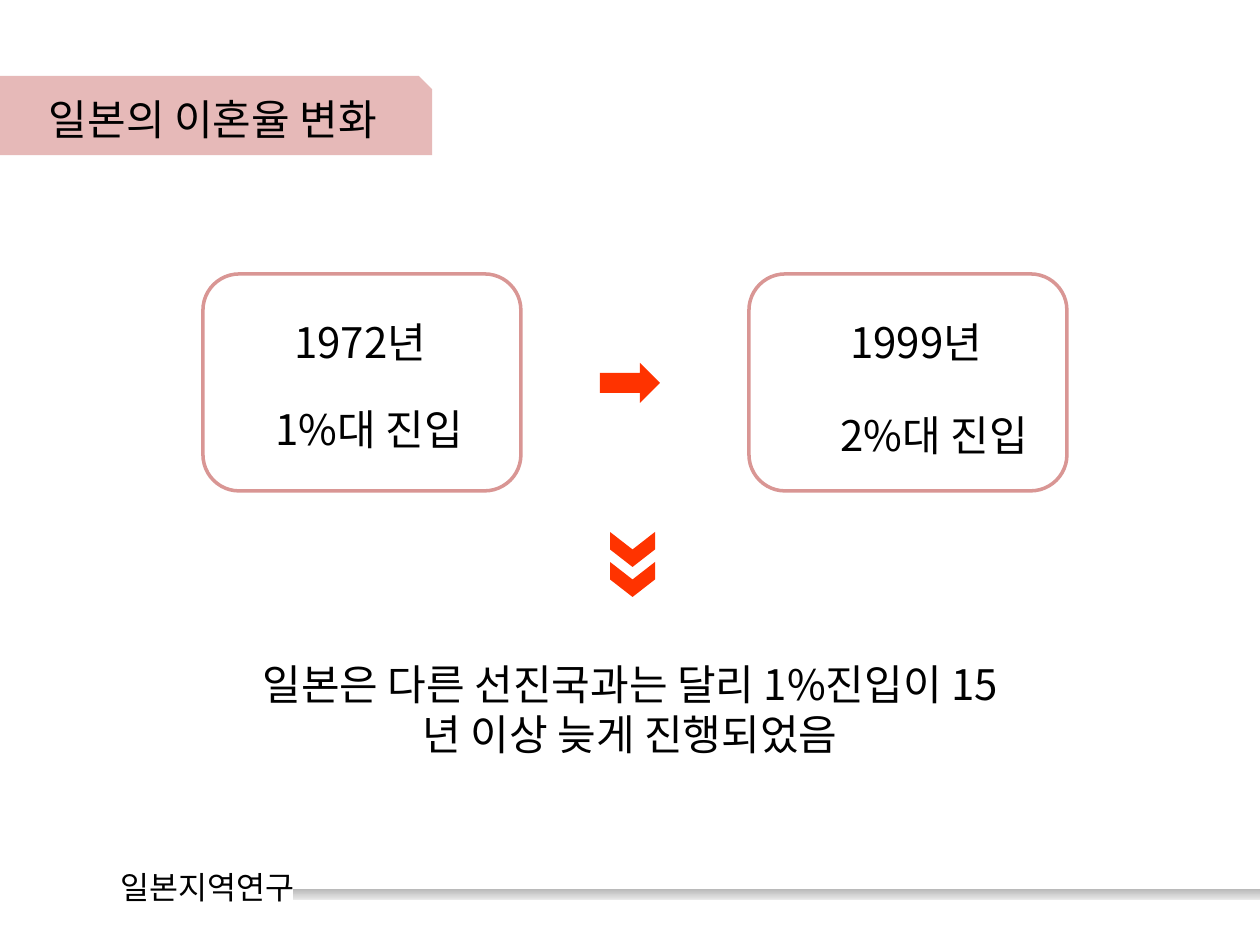
from dataclasses import dataclass
from typing import Optional

from pptx import Presentation
from pptx.dml.color import RGBColor
from pptx.enum.shapes import MSO_SHAPE as Shape
from pptx.enum.text import MSO_ANCHOR as Anchor, PP_ALIGN as Align
from pptx.oxml.ns import qn
from pptx.util import Emu, Pt

SCALE = 914400 / 126  # EMU per px


@dataclass(frozen=True)
class Theme:
    font: str = "Noto Sans CJK KR"
    ink: str = "000000"
    pink: str = "E6B9B8"
    rose: str = "D99694"
    red: str = "FF3300"
    dark: str = "B8B8B8"
    light: str = "E9E9E9"
    body: int = 24
    small: int = 18
    edge: int = 2


@dataclass(frozen=True)
class Box:
    x: int
    y: int
    w: int
    h: int

    def emu(self) -> list[Emu]:
        return [Emu(round(v * SCALE)) for v in (self.x, self.y, self.w, self.h)]


@dataclass(frozen=True)
class Card:
    frame: Box
    year: str
    year_at: Box
    rate: str
    rate_at: Box


THEME = Theme()
CARDS = [
    Card(Box(203, 274, 318, 217), "1972년", Box(282, 310, 189, 63),
         "1%대 진입", Box(263, 397, 238, 63)),
    Card(Box(749, 274, 318, 217), "1999년", Box(838, 310, 189, 63),
         "2%대 진입", Box(828, 403, 238, 63)),
]


def color(code: str) -> RGBColor:
    return RGBColor.from_string(code)


def draw(slide, kind: Shape, box: Box, fill: Optional[str] = None,
         edge: Optional[str] = None, turn: int = 0):
    item = slide.shapes.add_shape(kind, *box.emu())
    item.shadow.inherit = False
    item.rotation = turn
    if fill:
        item.fill.solid()
        item.fill.fore_color.rgb = color(fill)
    else:
        item.fill.background()
    if edge:
        item.line.color.rgb = color(edge)
        item.line.width = Pt(THEME.edge)
    else:
        item.line.fill.background()
    return item


def write(item, text: str, *, size: int = THEME.body,
          align: Align = Align.LEFT, anchor: Anchor = Anchor.TOP) -> None:
    frame = item.text_frame
    frame.word_wrap = True
    frame.vertical_anchor = anchor
    para = frame.paragraphs[0]
    para.alignment = align
    run = para.add_run()
    run.text = text
    run.font.size = Pt(size)
    run.font.name = THEME.font
    run.font.color.rgb = color(THEME.ink)
    # Korean letters take the East Asian font
    face = run.font._element.makeelement(qn("a:ea"), {"typeface": THEME.font})
    run.font._element.find(qn("a:latin")).addnext(face)


def label(slide, box: Box, text: str, align: Align = Align.LEFT) -> None:
    write(slide.shapes.add_textbox(*box.emu()), text, align=align)


def footer(slide) -> None:
    bar = draw(slide, Shape.RECTANGLE, Box(293, 889, 967, 11))
    bar.fill.gradient()
    bar.fill.gradient_angle = 270
    for stop, code in zip(bar.fill.gradient_stops, (THEME.dark, THEME.light)):
        stop.color.rgb = color(code)
    name = draw(slide, Shape.ROUNDED_RECTANGLE, Box(94, 859, 228, 57))
    write(name, "일본지역연구", size=THEME.small, align=Align.CENTER)


def panel(slide, card: Card) -> None:
    draw(slide, Shape.ROUNDED_RECTANGLE, card.frame, edge=THEME.rose)
    label(slide, card.year_at, card.year)
    label(slide, card.rate_at, card.rate)


def main() -> None:
    deck = Presentation()
    deck.slide_width, deck.slide_height = Box(0, 0, 1260, 945).emu()[2:]
    slide = deck.slides.add_slide(deck.slide_layouts[6])

    # Footer and title tab
    footer(slide)
    title = draw(slide, Shape.SNIP_1_RECTANGLE, Box(0, 76, 432, 79), THEME.pink)
    write(title, "일본의 이혼율 변화", align=Align.CENTER, anchor=Anchor.MIDDLE)

    # Two years with an arrow between
    for card in CARDS:
        panel(slide, card)
    draw(slide, Shape.RIGHT_ARROW, Box(600, 363, 60, 40), THEME.red)

    # Conclusion below the double chevron
    for step in range(2):
        draw(slide, Shape.CHEVRON, Box(615, 527 + 30 * step, 35, 45),
             THEME.red, turn=90)
    label(slide, Box(243, 652, 774, 115),
          "일본은 다른 선진국과는 달리 1%진입이 15년 이상 늦게 진행되었음",
          Align.CENTER)

    deck.save("out.pptx")


if __name__ == "__main__":
    main()
